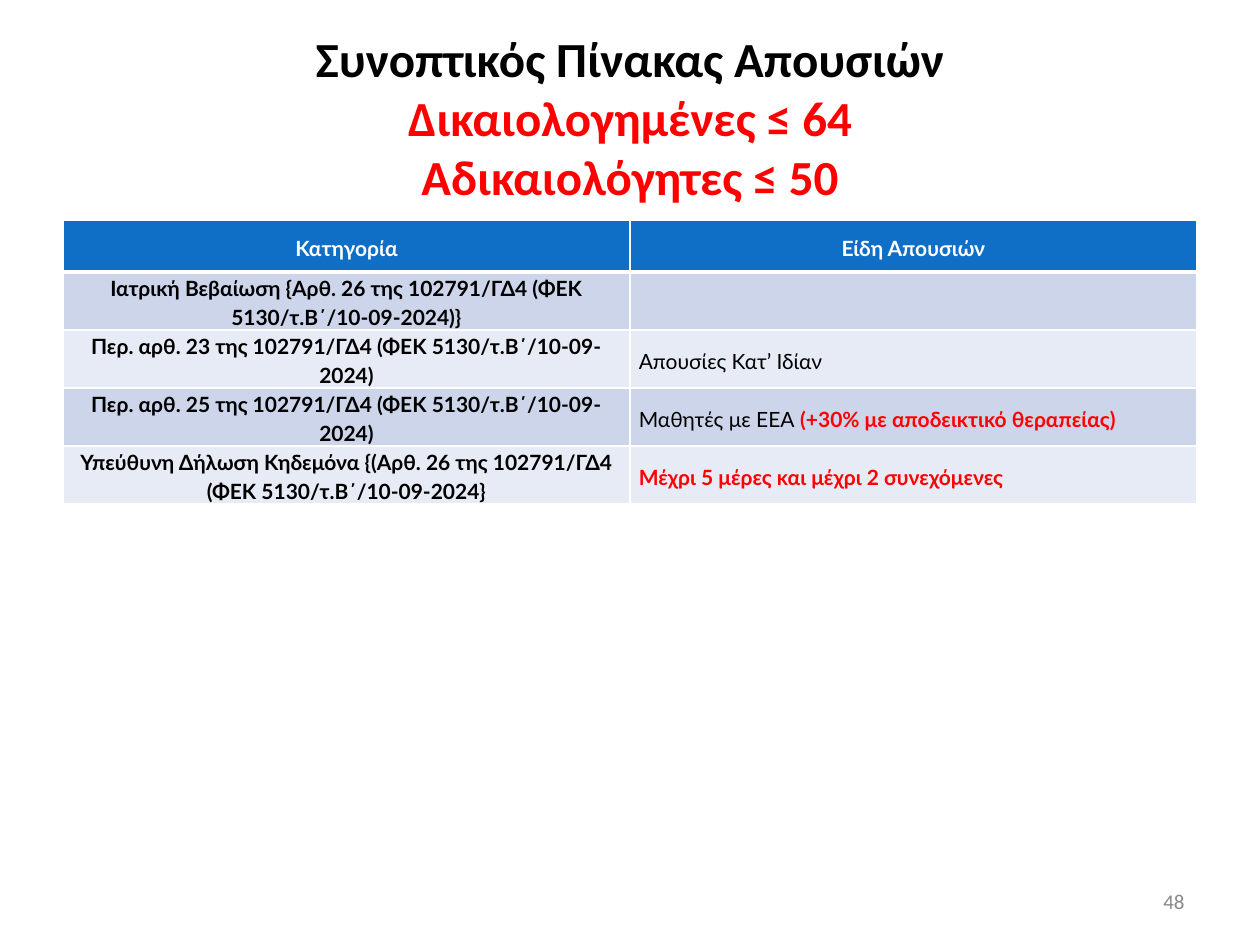
"""Build the slide with the summary table of pupil absences."""
from lxml.etree import SubElement
from pptx import Presentation
from pptx.dml.color import RGBColor
from pptx.enum.text import MSO_ANCHOR, PP_ALIGN
from pptx.oxml.ns import qn
from pptx.util import Inches, Pt

HUES = {"black": "000000", "red": "FF0000", "white": "FFFFFF", "grey": "898989",
        "head": "0F6FC6", "dark": "CCD5EA", "light": "E7EBF5"}


def style(run, size, hue, bold=False, face="Calibri"):
    font = run.font
    font.name, font.size, font.bold = face, Pt(size), bold
    font.color.rgb = RGBColor.from_string(HUES[hue])


def edge(cell, side, width):
    line = SubElement(cell._tc.get_or_add_tcPr(), qn(f"a:{side}"), w=str(Pt(width)))
    fill = SubElement(line, qn("a:solidFill"))
    SubElement(fill, qn("a:srgbClr"), val=HUES["white"])


deck = Presentation()
deck.slide_width, deck.slide_height = Inches(10), Inches(7.5)
slide = deck.slides.add_slide(deck.slide_layouts[6])

title = slide.shapes.add_textbox(Inches(0.5), Inches(0.3), Inches(9), Inches(1.25))
frame = title.text_frame
frame.word_wrap = True
frame.vertical_anchor = MSO_ANCHOR.MIDDLE
para = frame.paragraphs[0]
para.text = "Συνοπτικός Πίνακας Απουσιών\vΔικαιολογημένες ≤ 64\vΑδικαιολόγητες ≤ 50"
para.alignment = PP_ALIGN.CENTER
for run, hue in zip(para.runs, ("black", "red", "red")):
    style(run, 28, hue, True)

number = slide.shapes.add_textbox(Inches(7.17), Inches(6.95), Inches(2.33), Inches(0.4))
frame = number.text_frame
frame.word_wrap = True
frame.vertical_anchor = MSO_ANCHOR.MIDDLE
para = frame.paragraphs[0]
para.text = "48"
para.alignment = PP_ALIGN.RIGHT
style(para.runs[0], 12, "grey")

rows = [
    ("Κατηγορία", [("Είδη Απουσιών", "white", True)]),
    ("Ιατρική Βεβαίωση {Αρθ. 26 της 102791/ΓΔ4 (ΦΕΚ 5130/τ.Β΄/10-09-2024)}", []),
    ("Περ. αρθ. 23 της 102791/ΓΔ4 (ΦΕΚ 5130/τ.Β΄/10-09-2024)",
     [("Απουσίες Κατ’ Ιδίαν", "black", False)]),
    ("Περ. αρθ. 25 της 102791/ΓΔ4 (ΦΕΚ 5130/τ.Β΄/10-09-2024)",
     [("Μαθητές με ΕΕΑ ", "black", False),
      ("(+30% με αποδεικτικό θεραπείας)", "red", True)]),
    ("Υπεύθυνη Δήλωση Κηδεμόνα {(Αρθ. 26 της 102791/ΓΔ4 (ΦΕΚ 5130/τ.Β΄/10-09-2024}",
     [("Μέχρι 5 μέρες και μέχρι 2 συνεχόμενες", "red", True)]),
]
table = slide.shapes.add_table(len(rows), 2, Inches(0.5), Inches(1.75),
                               Inches(9), Inches(0.41 * len(rows))).table
for i, (label, parts) in enumerate(rows):
    head = i == 0
    back = "head" if head else "dark" if i % 2 else "light"
    first = [(label, "white" if head else "black", True)]
    for j, texts in enumerate((first, parts)):
        cell = table.cell(i, j)
        for side in ("lnL", "lnR", "lnT", "lnB"):
            thick = (head and side == "lnB") or (i == 1 and side == "lnT")
            edge(cell, side, 3 if thick else 1)
        cell.fill.solid()
        cell.fill.fore_color.rgb = RGBColor.from_string(HUES[back])
        cell.vertical_anchor = MSO_ANCHOR.MIDDLE
        cell.margin_left = cell.margin_right = Inches(0.07)
        cell.margin_top = cell.margin_bottom = 0
        para = cell.text_frame.paragraphs[0]
        para.alignment = PP_ALIGN.CENTER if head or j == 0 else PP_ALIGN.LEFT
        para.line_spacing = 1.15
        para.space_after = Pt(8)
        for text, hue, bold in texts:
            run = para.add_run()
            run.text = text
            style(run, 12, hue, bold, "Lato")

deck.save("out.pptx")
